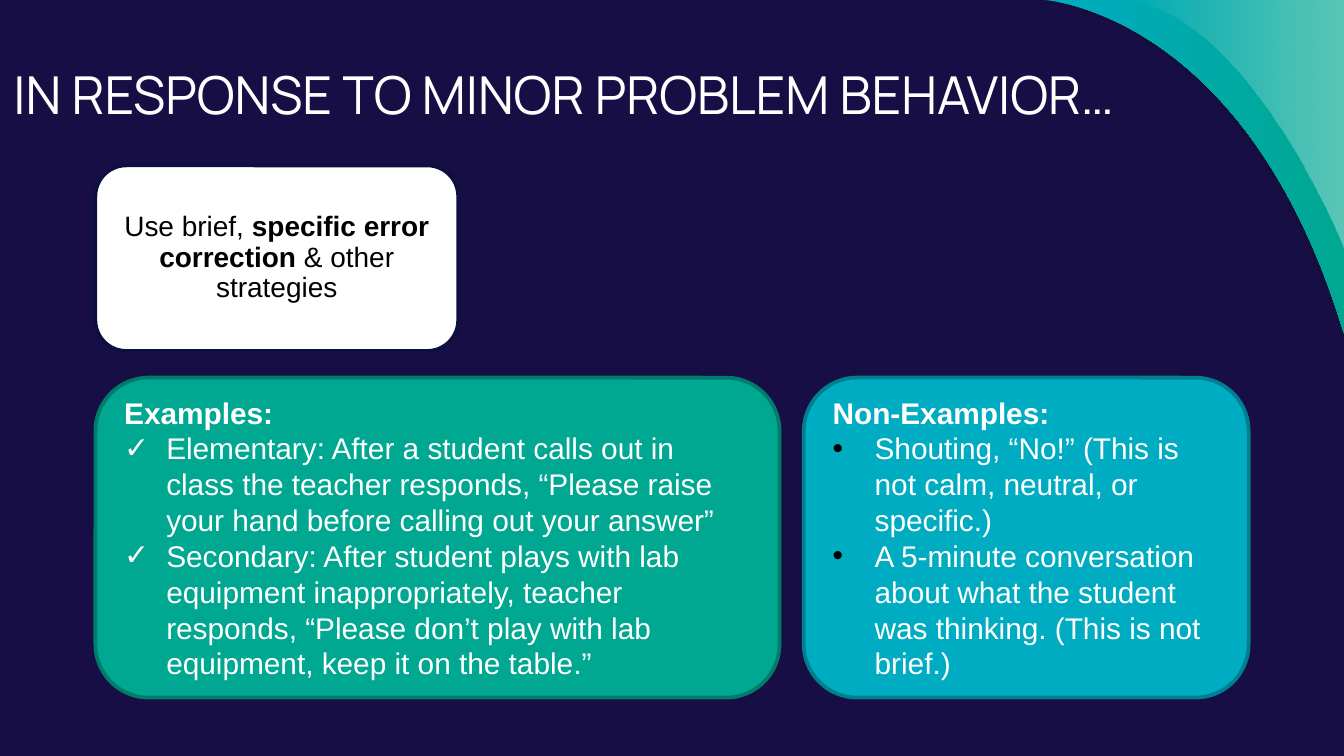
from dataclasses import dataclass

from lxml.etree import SubElement
from pptx import Presentation
from pptx.dml.color import RGBColor
from pptx.enum.shapes import MSO_SHAPE
from pptx.enum.text import MSO_ANCHOR, MSO_AUTO_SIZE, PP_ALIGN
from pptx.oxml.ns import qn
from pptx.util import Pt


@dataclass(frozen=True)
class Theme:
    background: str = "160E44"
    white: str = "FFFFFF"
    black: str = "000000"
    navy: str = "0D0F41"
    shade: str = "12102F"
    green: str = "00A791"
    green_edge: str = "007C6B"
    cyan: str = "00ACC2"
    cyan_edge: str = "007F90"
    title_font: str = "Manrope"
    body_font: str = "Arial"
    title_size: int = 28
    strategy_size: int = 15
    list_size: int = 16
    edge_width: int = 2
    indent: float = 22.5


class SlideBuilder:
    def __init__(self, prs, theme):
        self.theme = theme
        self.s = prs.slides.add_slide(prs.slide_layouts[5])
        fill = self.s.background.fill
        fill.solid()
        fill.fore_color.rgb = RGBColor.from_string(theme.background)

    def run(self, p, text, font, size, color, bold=False):
        r = p.add_run()
        r.text = text
        r.font.name = font
        r.font.size = Pt(size)
        r.font.bold = bold
        r.font.color.rgb = RGBColor.from_string(color)

    def title(self, text, x, y, w, h):
        sp = self.s.shapes.title
        sp.left, sp.top, sp.width, sp.height = Pt(x), Pt(y), Pt(w), Pt(h)
        tf = sp.text_frame
        tf.auto_size = MSO_AUTO_SIZE.NONE
        tf.vertical_anchor = MSO_ANCHOR.MIDDLE
        tf.margin_left = tf.margin_right = Pt(7.2)
        tf.margin_top = tf.margin_bottom = Pt(7.2)
        p = tf.paragraphs[0]
        p.alignment = PP_ALIGN.LEFT
        self.run(p, text, self.theme.title_font, self.theme.title_size, self.theme.white)

    def corner(self, curve, colors, alphas=(100, 100), steps=40):
        points = []
        for i in range(steps + 1):
            t = i / steps
            weights = ((1 - t) ** 3, 3 * t * (1 - t) ** 2, 3 * t * t * (1 - t), t ** 3)
            points.append([Pt(sum(k * c for k, c in zip(weights, axis))) for axis in zip(*curve)])
        points.append((Pt(720), 0))
        builder = self.s.shapes.build_freeform(*points[0])
        builder.add_line_segments(points[1:], close=True)
        sp = builder.convert_to_shape()
        sp.shadow.inherit = False
        sp.line.fill.background()
        sp.fill.gradient()
        sp.fill.gradient_angle = 0
        for stop, position, color, alpha in zip(sp.fill.gradient_stops, (0, 1), colors, alphas):
            stop.position = position
            stop.color.rgb = RGBColor.from_string(color)
        for node, alpha in zip(sp.fill._xPr.iter(qn("a:srgbClr")), alphas):
            SubElement(node, qn("a:alpha"), val=str(alpha * 1000))

    def box(self, x, y, w, h, fill, edge):
        sp = self.s.shapes.add_shape(MSO_SHAPE.ROUNDED_RECTANGLE, Pt(x), Pt(y), Pt(w), Pt(h))
        sp.shadow.inherit = False
        sp.fill.solid()
        sp.fill.fore_color.rgb = RGBColor.from_string(fill)
        sp.line.color.rgb = RGBColor.from_string(edge)
        sp.line.width = Pt(self.theme.edge_width)
        tf = sp.text_frame
        tf.word_wrap = True
        tf.vertical_anchor = MSO_ANCHOR.MIDDLE
        return tf

    def strategy(self, runs, *frame):
        th = self.theme
        p = self.box(*frame, th.white, th.navy).paragraphs[0]
        p.alignment = PP_ALIGN.CENTER
        p.line_spacing = 0.9
        for text, bold in runs:
            self.run(p, text, th.body_font, th.strategy_size, th.black, bold)

    def bullet(self, p, char, color):
        pPr = p._p.get_or_add_pPr()
        pPr.set("marL", str(Pt(self.theme.indent)))
        pPr.set("indent", str(-Pt(self.theme.indent)))
        SubElement(SubElement(pPr, qn("a:buClr")), qn("a:srgbClr"), val=color)
        SubElement(pPr, qn("a:buFont"), typeface=self.theme.body_font)
        SubElement(pPr, qn("a:buChar"), char=char)

    def list_box(self, heading, items, char, bullet_color, fill, edge, *frame):
        th = self.theme
        tf = self.box(*frame, fill, edge)
        p = tf.paragraphs[0]
        p.alignment = PP_ALIGN.LEFT
        self.run(p, heading, th.body_font, th.list_size, th.white, True)
        for item in items:
            p = tf.add_paragraph()
            p.alignment = PP_ALIGN.LEFT
            self.bullet(p, char, bullet_color)
            self.run(p, item, th.body_font, th.list_size, th.white)


def main():
    prs = Presentation()
    prs.slide_width, prs.slide_height = Pt(720), Pt(405)
    th = Theme()
    b = SlideBuilder(prs, th)

    b.corner([(720, 182.9), (666.7, 5.8), (555.1, 0), (555.1, 0)], (th.shade, th.shade), (54, 54))
    b.corner([(720, 178.6), (668.2, 5.8), (559.4, 0), (559.4, 0)], (th.cyan, th.green))
    b.corner([(720, 132.5), (720, 132.5), (670.3, 7.9), (602.6, 0)], (th.white, th.white), (0, 36))

    b.title("IN RESPONSE TO MINOR PROBLEM BEHAVIOR…", 0, 25.2, 720, 49.7)
    b.strategy(
        [("Use brief, ", False), ("specific error correction", True), (" & other strategies", False)],
        51.1, 88.6, 194.4, 99.4,
    )
    b.list_box(
        "Examples:",
        [
            "Elementary: After a student calls out in class the teacher responds, “Please raise your hand before calling out your answer”",
            "Secondary: After student plays with lab equipment inappropriately, teacher responds, “Please don’t play with lab equipment, keep it on the table.”",
        ],
        "✓", th.white, th.green, th.green_edge, 51.1, 202.3, 366.5, 171.4,
    )
    b.list_box(
        "Non-Examples:",
        [
            "Shouting, “No!” (This is not calm, neutral, or specific.)",
            "A 5-minute conversation about what the student was thinking. (This is not brief.)",
        ],
        "•", th.black, th.cyan, th.cyan_edge, 430.6, 202.3, 238.3, 171.4,
    )
    prs.save("out.pptx")


if __name__ == "__main__":
    main()
